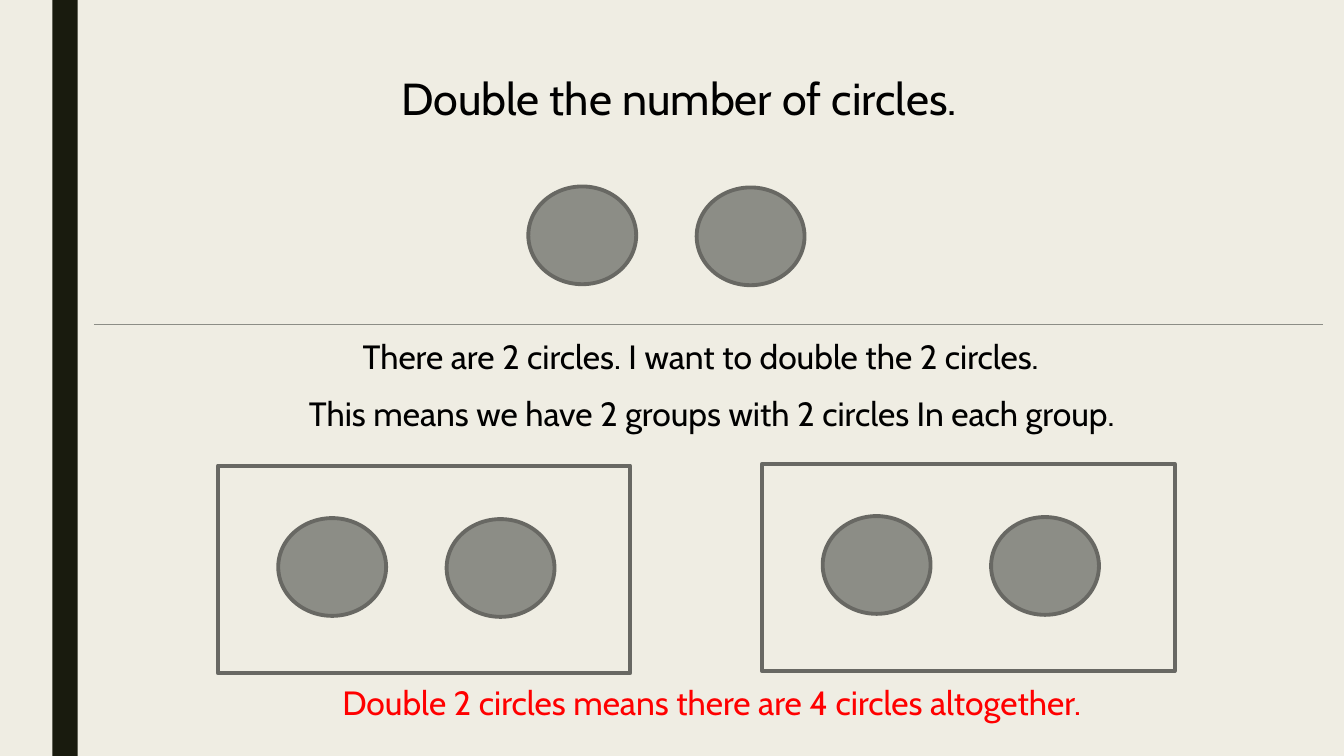
from typing import NamedTuple

from lxml.etree import SubElement
from pptx import Presentation
from pptx.dml.color import RGBColor
from pptx.enum.shapes import MSO_CONNECTOR, MSO_SHAPE
from pptx.enum.text import MSO_AUTO_SIZE, PP_ALIGN
from pptx.oxml.ns import qn
from pptx.util import Inches, Pt

COLORS = {
    "background": "EFEDE3",
    "bar": "191B0E",
    "circle": "8C8D86",
    "outline": "686863",
    "text": "000000",
    "answer": "FF0000",
}
CIRCLE_W, CIRCLE_H = 1.07, 0.97
CIRCLE_STEP = (1.67, 0.01)
GROUP_W, GROUP_H = 4.09, 2.06
GROUP_INSET = (0.6, 0.52)


class Caption(NamedTuple):
    text: str
    left: float
    top: float
    width: float
    height: float = 0.5
    size: int = 24
    color: str = "text"
    align: PP_ALIGN = PP_ALIGN.CENTER
    wrap: bool = True


class Group(NamedTuple):
    left: float
    top: float


CAPTIONS = [
    Caption("Double the number of circles.", 3.88, 0.65, 5.88, 0.64, 32,
            align=PP_ALIGN.LEFT, wrap=False),
    Caption("There are 2 circles. I want to double the 2 circles.", 0.93, 3.28, 12.04),
    Caption("This means we have 2 groups with 2 circles In each group.", 1.04, 3.85, 12.04),
    Caption("Double 2 circles means there are 4 circles altogether.", 1.04, 6.72, 12.04,
            color="answer"),
]
GROUPS = [Group(2.16, 4.62), Group(7.56, 4.6)]


def rgb(name: str) -> RGBColor:
    return RGBColor.from_string(COLORS[name])


def add_box(shapes, kind: MSO_SHAPE, left: float, top: float, width: float,
            height: float, fill: str = "", line: str = "") -> None:
    sp = shapes.add_shape(kind, Inches(left), Inches(top), Inches(width), Inches(height))
    sp.shadow.inherit = False
    if fill:
        sp.fill.solid()
        sp.fill.fore_color.rgb = rgb(fill)
    else:
        sp.fill.background()
    if line:
        sp.line.color.rgb = rgb(line)
        sp.line.width = Pt(2.75)
    else:
        sp.line.fill.background()


def add_circle_pair(shapes, left: float, top: float) -> None:
    dx, dy = CIRCLE_STEP
    for i in range(2):
        add_box(shapes, MSO_SHAPE.OVAL, left + i * dx, top + i * dy,
                CIRCLE_W, CIRCLE_H, "circle", "outline")


def add_group(shapes, group: Group) -> None:
    members = shapes.add_group_shape().shapes
    dx, dy = GROUP_INSET
    add_circle_pair(members, group.left + dx, group.top + dy)
    add_box(members, MSO_SHAPE.RECTANGLE, group.left, group.top,
            GROUP_W, GROUP_H, line="outline")


def add_divider(shapes) -> None:
    line = shapes.add_connector(MSO_CONNECTOR.STRAIGHT, Inches(0.93), Inches(3.22),
                                Inches(13.12), Inches(3.22))
    line.line.color.rgb = rgb("circle")
    line.line.width = Pt(0.5)
    SubElement(line._element.spPr, qn("a:effectLst"))


def add_caption(shapes, caption: Caption) -> None:
    sp = shapes.add_textbox(Inches(caption.left), Inches(caption.top),
                            Inches(caption.width), Inches(caption.height))
    tf = sp.text_frame
    tf.word_wrap = caption.wrap
    tf.auto_size = MSO_AUTO_SIZE.SHAPE_TO_FIT_TEXT
    p = tf.paragraphs[0]
    p.alignment = caption.align
    r = p.add_run()
    r.text = caption.text
    for name, value in {"name": "Cabin", "size": Pt(caption.size)}.items():
        setattr(r.font, name, value)
    r.font.color.rgb = rgb(caption.color)


def main() -> None:
    prs = Presentation()
    prs.slide_width, prs.slide_height = Inches(13.33), Inches(7.5)
    s = prs.slides.add_slide(prs.slide_layouts[6])
    s.background.fill.solid()
    s.background.fill.fore_color.rgb = rgb("background")

    add_box(s.shapes, MSO_SHAPE.RECTANGLE, 0.52, 0, 0.25, 7.5, "bar")
    title, *sentences, answer = CAPTIONS
    add_caption(s.shapes, title)
    add_circle_pair(s.shapes, 5.24, 1.85)
    add_divider(s.shapes)
    for sentence in sentences:
        add_caption(s.shapes, sentence)
    for group in GROUPS:
        add_group(s.shapes, group)
    add_caption(s.shapes, answer)

    prs.save("out.pptx")


if __name__ == "__main__":
    main()
